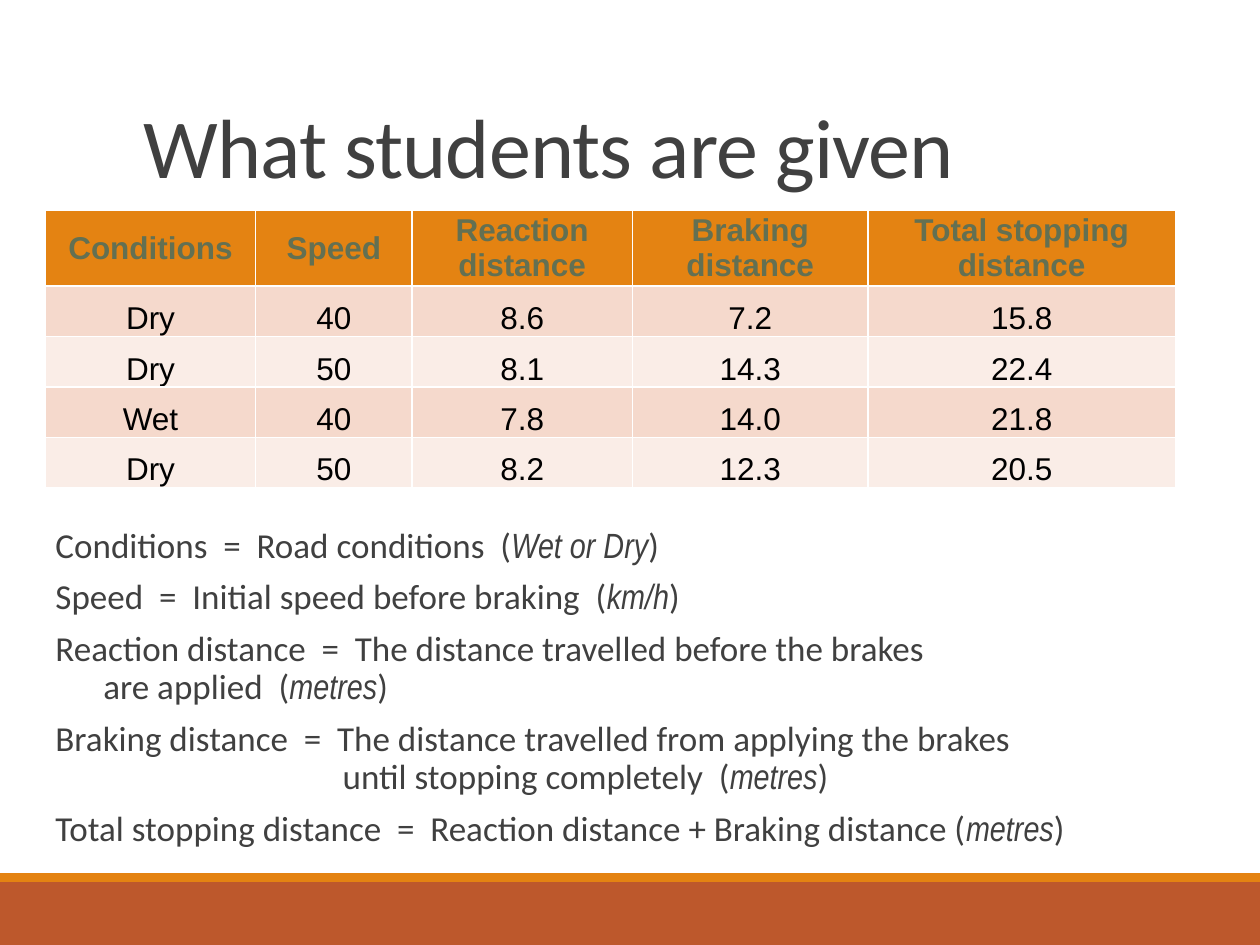
"""Build the slide that lists the stopping distance data students are given."""

import dataclasses

import pptx
import pptx.dml.color
import pptx.enum.shapes
import pptx.enum.text
import pptx.util

SLIDE_WIDTH = pptx.util.Inches(10)
SLIDE_HEIGHT = pptx.util.Inches(7.5)
COLUMN = SLIDE_WIDTH / 100
ROW = SLIDE_HEIGHT / 75

DARK_GREY = "404040"
ORANGE = "E48312"
RUST = "BD582C"
HEADER_GREEN = "637052"
BLACK = "000000"
BAND_FILLS = ("F5D9CC", "FAEDE7")

COLUMN_SPANS = (16.7, 12.4, 17.5, 18.7, 24.4)
HEADER_SPAN = 5.6
BODY_SPAN = 4
TABLE_ROWS = (
    ("Conditions", "Speed", "Reaction distance", "Braking distance", "Total stopping distance"),
    ("Dry", "40", "8.6", "7.2", "15.8"),
    ("Dry", "50", "8.1", "14.3", "22.4"),
    ("Wet", "40", "7.8", "14.0", "21.8"),
    ("Dry", "50", "8.2", "12.3", "20.5"),
)


@dataclasses.dataclass(frozen=True)
class Area:
    """A rectangle in columns and rows of the slide grid."""

    left: float
    top: float
    columns: float
    rows: float

    def lengths(self) -> tuple[int, int, int, int]:
        """Return left, top, width and height as slide lengths."""
        return (
            int(self.left * COLUMN),
            int(self.top * ROW),
            int(self.columns * COLUMN),
            int(self.rows * ROW),
        )


@dataclasses.dataclass(frozen=True)
class Definition:
    """A term's explanation, its unit and the column of its wrapped line."""

    wording: str
    unit: str
    hanging: float = 1


DEFINITIONS = (
    Definition("Conditions  =  Road conditions  (", "Wet or Dry"),
    Definition("Speed  =  Initial speed before braking  (", "km/h"),
    Definition(
        "Reaction distance  =  The distance travelled before the brakes\vare applied  (",
        "metres",
        4.8,
    ),
    Definition(
        "Braking distance  =  The distance travelled from applying the brakes"
        "\vuntil stopping completely  (",
        "metres",
        23.8,
    ),
    Definition("Total stopping distance  =  Reaction distance + Braking distance (", "metres"),
)


def colour(value: str) -> pptx.dml.color.RGBColor:
    """Turn a hex string into a colour."""
    return pptx.dml.color.RGBColor.from_string(value)


def style_run(run, font: str, size: float, value: str, bold=False, italic=False) -> None:
    """Set the typeface, size, colour and emphasis of a run."""
    run.font.name = font
    run.font.size = pptx.util.Pt(size)
    run.font.color.rgb = colour(value)
    run.font.bold = bold
    run.font.italic = italic


def add_band(slide, area: Area, value: str) -> None:
    """Draw a plain band of one colour."""
    band = slide.shapes.add_shape(pptx.enum.shapes.MSO_SHAPE.RECTANGLE, *area.lengths())
    band.shadow.inherit = False
    band.fill.solid()
    band.fill.fore_color.rgb = colour(value)
    band.line.fill.background()


def add_text_frame(slide, area: Area):
    """Add a wrapping text box and return its text frame."""
    text_frame = slide.shapes.add_textbox(*area.lengths()).text_frame
    text_frame.word_wrap = True
    return text_frame


def add_title(slide, area: Area, title: str) -> None:
    """Draw the title at the bottom of its area."""
    text_frame = add_text_frame(slide, area)
    text_frame.vertical_anchor = pptx.enum.text.MSO_ANCHOR.BOTTOM
    text_frame.text = title
    paragraph = text_frame.paragraphs[0]
    paragraph.line_spacing = 0.85
    run = paragraph.runs[0]
    style_run(run, "Calibri", 48, DARK_GREY)
    run.font._element.set("spc", "-50")


def add_definitions(slide, area: Area, definitions: tuple[Definition, ...]) -> None:
    """Write one paragraph per definition, with the unit in italics."""
    text_frame = add_text_frame(slide, area)
    text_frame.margin_left = text_frame.margin_right = 0
    for index, definition in enumerate(definitions):
        paragraph = text_frame.add_paragraph() if index else text_frame.paragraphs[0]
        paragraph.text = definition.wording
        paragraph.line_spacing = 0.9
        paragraph.space_before = pptx.util.Pt(6)
        paragraph.space_after = pptx.util.Pt(2)
        properties = paragraph._p.get_or_add_pPr()
        properties.set("marL", str(int(definition.hanging * COLUMN)))
        properties.set("indent", str(int((1 - definition.hanging) * COLUMN)))
        for run in paragraph.runs:
            style_run(run, "Calibri", 20, DARK_GREY)
        unit = paragraph.add_run()
        unit.text = definition.unit
        style_run(unit, "Arial Narrow", 20, DARK_GREY, italic=True)
        closing = paragraph.add_run()
        closing.text = ")"
        style_run(closing, "Calibri", 20, DARK_GREY)


def fill_cell(cell, wording: str, fill: str, is_header: bool) -> None:
    """Write and format one table cell."""
    anchors = pptx.enum.text.MSO_ANCHOR
    cell.fill.solid()
    cell.fill.fore_color.rgb = colour(fill)
    cell.margin_top = cell.margin_bottom = 0
    cell.margin_left = cell.margin_right = int(0.8 * COLUMN)
    cell.vertical_anchor = anchors.MIDDLE if is_header else anchors.BOTTOM
    cell.text_frame.text = wording
    paragraph = cell.text_frame.paragraphs[0]
    paragraph.alignment = pptx.enum.text.PP_ALIGN.CENTER
    style_run(paragraph.runs[0], "Arial", 18, HEADER_GREEN if is_header else BLACK, bold=is_header)


def add_distance_table(slide, left: float, top: float) -> None:
    """Draw the stopping distance table."""
    row_spans = (HEADER_SPAN,) + (BODY_SPAN,) * (len(TABLE_ROWS) - 1)
    area = Area(left, top, sum(COLUMN_SPANS), sum(row_spans))
    table = slide.shapes.add_table(len(row_spans), len(COLUMN_SPANS), *area.lengths()).table
    for column, span in zip(table.columns, COLUMN_SPANS):
        column.width = int(span * COLUMN)
    for index, (row, span, wordings) in enumerate(zip(table.rows, row_spans, TABLE_ROWS)):
        row.height = int(span * ROW)
        fill = BAND_FILLS[(index - 1) % 2] if index else ORANGE
        for cell, wording in zip(row.cells, wordings):
            fill_cell(cell, wording, fill, index == 0)


def main() -> None:
    """Build and save the presentation."""
    presentation = pptx.Presentation()
    presentation.slide_width = SLIDE_WIDTH
    presentation.slide_height = SLIDE_HEIGHT
    slide = presentation.slides.add_slide(presentation.slide_layouts[6])
    add_band(slide, Area(0, 70, 100, 5), RUST)
    add_band(slide, Area(0, 69.3, 100, 0.7), ORANGE)
    add_title(slide, Area(10.4, 5, 78.8, 11), "What students are given")
    add_definitions(slide, Area(3.4, 41.4, 94.5, 29.7), DEFINITIONS)
    add_distance_table(slide, 3.6, 16.7)
    presentation.save("out.pptx")


if __name__ == "__main__":
    main()
